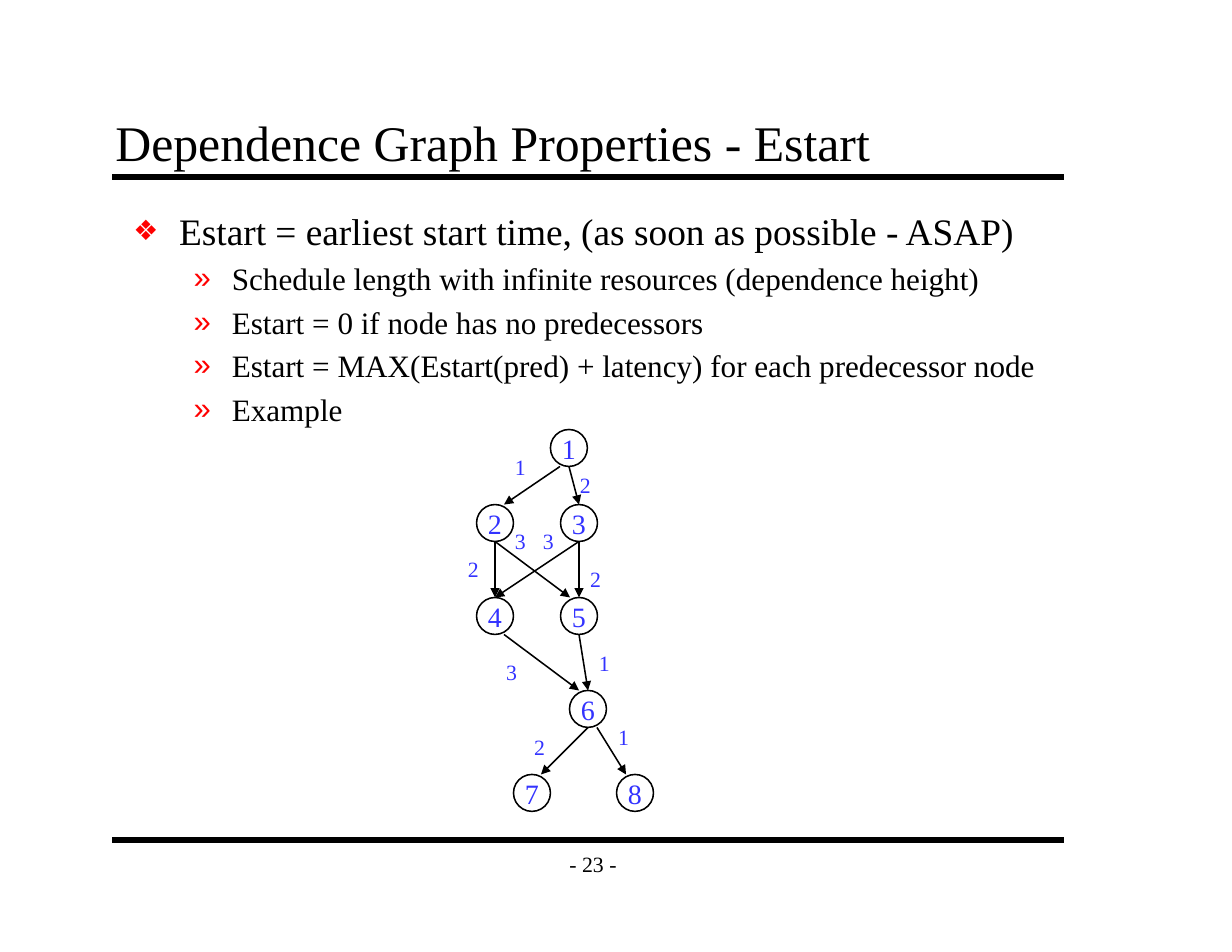
from lxml.etree import SubElement
from pptx import Presentation
from pptx.dml.color import RGBColor
from pptx.enum.shapes import MSO_CONNECTOR as Connector, MSO_SHAPE as Shape
from pptx.enum.text import MSO_ANCHOR as Anchor, MSO_AUTO_SIZE as AutoSize, PP_ALIGN as Align
from pptx.oxml.ns import qn
from pptx.util import Inches, Pt

COLORS = {"ink": "000000", "bullet": "FF0000", "graph": "3333FF"}

NODE_SIZE = 0.33
SIDE = 0.08  # sideways shift of an arrow end from the middle of a node

# Node name: centre x, centre y
NODES = {
    "1": (5.08, 4.0),
    "2": (4.42, 4.67), "3": (5.17, 4.67),
    "4": (4.42, 5.5), "5": (5.17, 5.5),
    "6": (5.25, 6.33),
    "7": (4.75, 7.08), "8": (5.67, 7.08),
}

# From, to, shift at start, shift at end, latency, left and top of its label
EDGES = [
    ("1", "2", -SIDE, SIDE, "1", 4.5, 4.0),
    ("1", "3", 0, 0, "2", 5.08, 4.16),
    ("2", "5", 0, -SIDE, "3", 4.5, 4.66),
    ("3", "4", 0, 0, "3", 4.75, 4.66),
    ("3", "5", 0, 0, "2", 5.17, 5.0),
    ("2", "4", 0, 0, "2", 4.08, 4.91),
    ("4", "6", SIDE, -SIDE, "3", 4.42, 5.83),
    ("5", "6", 0, 0, "1", 5.25, 5.75),
    ("6", "8", SIDE, -SIDE, "1", 5.42, 6.41),
    ("6", "7", 0, SIDE, "2", 4.67, 6.5),
]

POINTS = [
    (0, "Estart = earliest start time, (as soon as possible - ASAP)"),
    (1, "Schedule length with infinite resources (dependence height)"),
    (1, "Estart = 0 if node has no predecessors"),
    (1, "Estart = MAX(Estart(pred) + latency) for each predecessor node"),
    (1, "Example"),
]

# For each level: text size, left margin, hanging indent, bullet, bullet size in %
LEVELS = [(24, 0.41, 0.41, "❖", 75), (20, 0.88, 0.34, "»", 100)]


class SlideBuilder:
    font = "Times New Roman"

    def __init__(self, page):
        self.page = page

    def format_para(self, para, size, color="ink", align=Align.LEFT):
        para.alignment = align
        for span in para.runs:
            span.font.name = self.font
            span.font.size = Pt(size)
            span.font.color.rgb = RGBColor.from_string(COLORS[color])

    def place(self, box, left, top, width, height, anchor):
        """Move a placeholder and give its text frame the slide's insets."""
        box.left, box.top = Inches(left), Inches(top)
        box.width, box.height = Inches(width), Inches(height)
        frame = box.text_frame
        frame.auto_size = AutoSize.NONE
        frame.vertical_anchor = anchor
        frame.margin_left = frame.margin_right = Inches(0.11)
        frame.margin_top = frame.margin_bottom = Inches(0.06)
        return frame

    def title(self, text):
        frame = self.place(self.page.shapes.title, 0.92, 0.92, 8.5, 0.67, Anchor.BOTTOM)
        frame.text = text
        self.format_para(frame.paragraphs[0], 32)

    def bullets(self, points):
        frame = self.place(self.page.placeholders[1], 1.08, 1.8, 8.42, 5.7, Anchor.TOP)
        frame.text = "\n".join(text for _, text in points)
        for para, (level, _) in zip(frame.paragraphs, points):
            size, margin, hang, char, percent = LEVELS[level]
            para.level = level
            self.format_para(para, size)
            props = para._p.get_or_add_pPr()
            props.set("marL", str(Inches(margin)))
            props.set("indent", str(-Inches(hang)))
            color = SubElement(props, qn("a:buClr"))
            SubElement(color, qn("a:srgbClr"), val=COLORS["bullet"])
            SubElement(props, qn("a:buSzPct"), val=str(percent * 1000))
            SubElement(props, qn("a:buChar"), char=char)

    def line(self, start, end, width, arrow=False):
        points = [Inches(value) for value in (*start, *end)]
        line = self.page.shapes.add_connector(Connector.STRAIGHT, *points)
        line.line.color.rgb = RGBColor.from_string(COLORS["ink"])
        line.line.width = Pt(width)
        if arrow:
            SubElement(line.line._get_or_add_ln(), qn("a:tailEnd"), type="triangle")
        SubElement(line._element.spPr, qn("a:effectLst"))
        return line

    def node(self, name, x, y):
        half = NODE_SIZE / 2
        circle = self.page.shapes.add_shape(
            Shape.OVAL, Inches(x - half), Inches(y - half), Inches(NODE_SIZE), Inches(NODE_SIZE))
        circle.shadow.inherit = False
        circle.fill.background()
        circle.line.color.rgb = RGBColor.from_string(COLORS["ink"])
        circle.line.width = Pt(1)
        frame = circle.text_frame
        frame.word_wrap = False
        frame.vertical_anchor = Anchor.MIDDLE
        frame.text = name
        self.format_para(frame.paragraphs[0], 18, "graph", Align.CENTER)
        return circle

    def label(self, text, left, top, width=0.3, height=0.33, color="graph", align=Align.LEFT):
        box = self.page.shapes.add_textbox(
            Inches(left), Inches(top), Inches(width), Inches(height))
        frame = box.text_frame
        frame.word_wrap = False
        frame.text = text
        self.format_para(frame.paragraphs[0], 14, color, align)
        return frame


def draw_graph(builder):
    circles = {name: builder.node(name, x, y) for name, (x, y) in NODES.items()}
    half = NODE_SIZE / 2
    for source, target, start_shift, end_shift, *_ in EDGES:
        start_x, start_y = NODES[source]
        end_x, end_y = NODES[target]
        arrow = builder.line((start_x + start_shift, start_y + half),
                             (end_x + end_shift, end_y - half), 1, arrow=True)
        if end_shift == 0:
            arrow.end_connect(circles[target], 0)
    for *_, latency, left, top in EDGES:
        builder.label(latency, left, top)


def main():
    deck = Presentation()
    deck.slide_width, deck.slide_height = Inches(11), Inches(8.5)
    builder = SlideBuilder(deck.slides.add_slide(deck.slide_layouts[1]))
    for y in (1.58, 7.5):
        builder.line((1, y), (9.5, y), 4)
    number = builder.label("- 23 -", 4.92, 7.5, 0.75, 0.42, "ink", Align.CENTER)
    number.vertical_anchor = Anchor.MIDDLE
    builder.title("Dependence Graph Properties - Estart")
    builder.bullets(POINTS)
    draw_graph(builder)
    deck.save("out.pptx")


if __name__ == "__main__":
    main()
